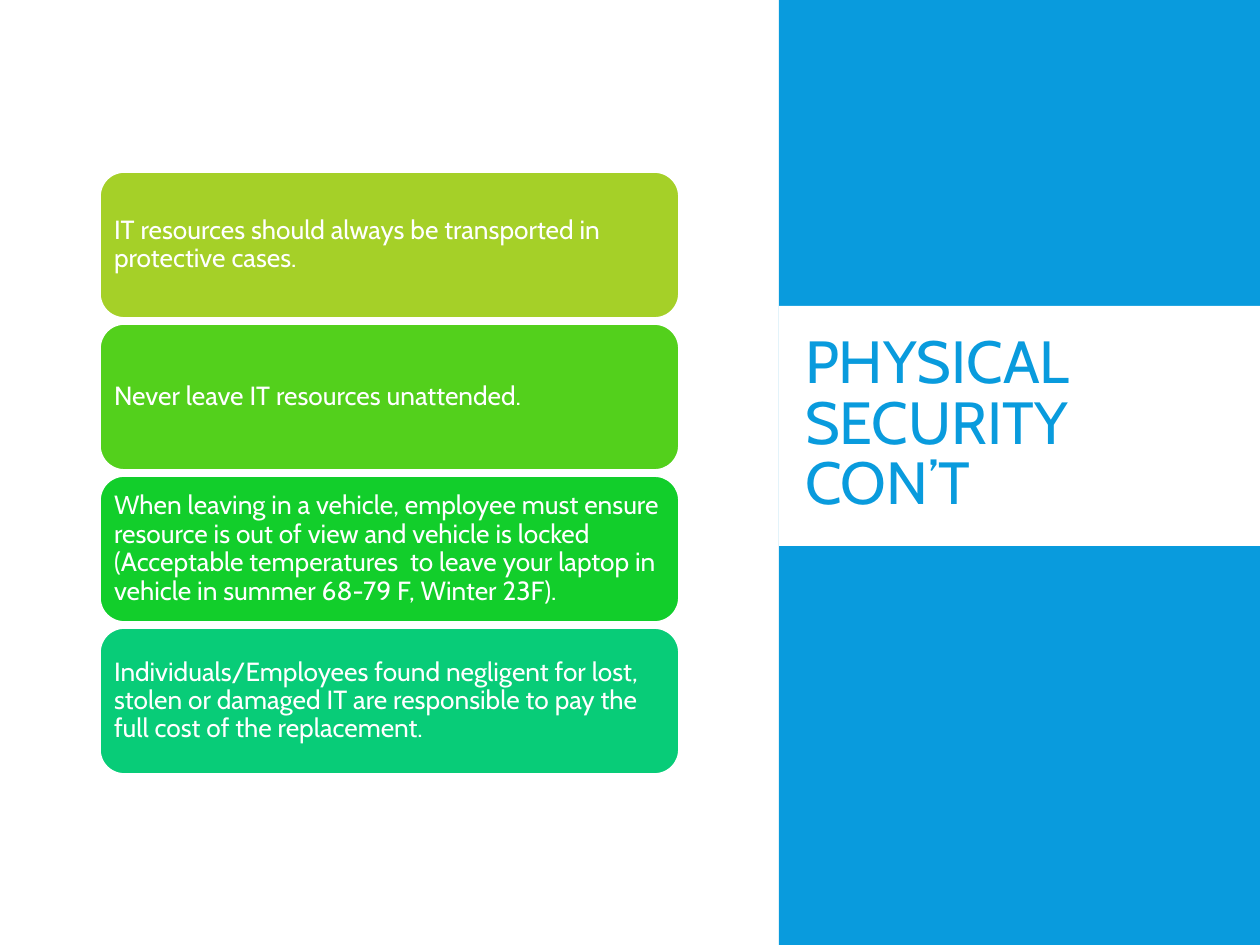
from pptx import Presentation
from pptx.dml.color import RGBColor
from pptx.enum.shapes import MSO_SHAPE
from pptx.enum.text import MSO_ANCHOR, PP_ALIGN
from pptx.util import Emu, Pt

PX_PER_INCH = 126
SLIDE_WIDTH, SLIDE_HEIGHT = 1260, 945
TITLE_ONLY = 5

CARDS = [
    ("A5D028", "IT resources should always be transported in protective cases."),
    ("53D01C", "Never leave IT resources unattended."),
    ("12CE2B", "When leaving in a vehicle, employee must ensure resource is out of "
               "view and vehicle is locked (Acceptable temperatures  to leave your "
               "laptop in vehicle in summer 68-79 F, Winter 23F)."),
    ("08CC78", "Individuals/Employees found negligent for lost, stolen or damaged IT "
               "are responsible to pay the full cost of the replacement."),
]


def px(length):
    return Emu(round(length * 914400 / PX_PER_INCH))


def color(hex_string):
    return RGBColor.from_string(hex_string)


class SlideBuilder:
    font = "Cabin"
    blue = "099BDD"
    white = "FFFFFF"

    def __init__(self, slide):
        self.slide = slide

    def box(self, kind, left, top, width, height, fill):
        shape = self.slide.shapes.add_shape(
            kind, px(left), px(top), px(width), px(height))
        shape.shadow.inherit = False
        shape.fill.solid()
        shape.fill.fore_color.rgb = color(fill)
        shape.line.fill.background()
        return shape

    def panel(self, left, top, width, height, fill):
        return self.box(MSO_SHAPE.RECTANGLE, left, top, width, height, fill)

    def card(self, left, top, width, height, fill, text):
        shape = self.box(MSO_SHAPE.ROUNDED_RECTANGLE, left, top, width, height, fill)
        shape.line.color.rgb = color(self.white)
        shape.line.width = Pt(1)
        self.set_text(shape.text_frame, text, 15, self.white, 0.9, inset=7)

    def title(self, left, top, width, height, text):
        shape = self.slide.shapes.title
        shape.left, shape.top = px(left), px(top)
        shape.width, shape.height = px(width), px(height)
        self.set_text(shape.text_frame, text, 34, self.blue, 0.85, inset=13)
        # Bring the title in front of the panels
        self.slide.shapes._spTree.append(shape._element)

    def set_text(self, frame, text, size, text_color, line_spacing, inset):
        frame.text = text
        frame.word_wrap = True
        frame.vertical_anchor = MSO_ANCHOR.MIDDLE
        frame.margin_left = frame.margin_right = px(inset)
        frame.margin_top = frame.margin_bottom = px(7)
        paragraph = frame.paragraphs[0]
        paragraph.alignment = PP_ALIGN.LEFT
        paragraph.line_spacing = line_spacing
        font = paragraph.runs[0].font
        font.name = self.font
        font.size = Pt(size)
        font.color.rgb = color(text_color)


def main():
    presentation = Presentation()
    presentation.slide_width = px(SLIDE_WIDTH)
    presentation.slide_height = px(SLIDE_HEIGHT)
    slide = presentation.slides.add_slide(presentation.slide_layouts[TITLE_ONLY])
    builder = SlideBuilder(slide)

    # Blue side panel with a white band for the title
    panel_left = 779
    panel_width = SLIDE_WIDTH - panel_left
    builder.panel(panel_left, 0, panel_width, SLIDE_HEIGHT, builder.blue)
    builder.panel(panel_left, 306, panel_width, 240, builder.white)
    builder.title(792, 322, 427, 208, "PHYSICAL SECURITY CON’T")

    # Stack of rule cards
    card_height, gap = 146, 6
    for index, (fill, text) in enumerate(CARDS):
        top = 172 + index * (card_height + gap)
        builder.card(100, top, 579, card_height, fill, text)

    presentation.save("out.pptx")


if __name__ == "__main__":
    main()
